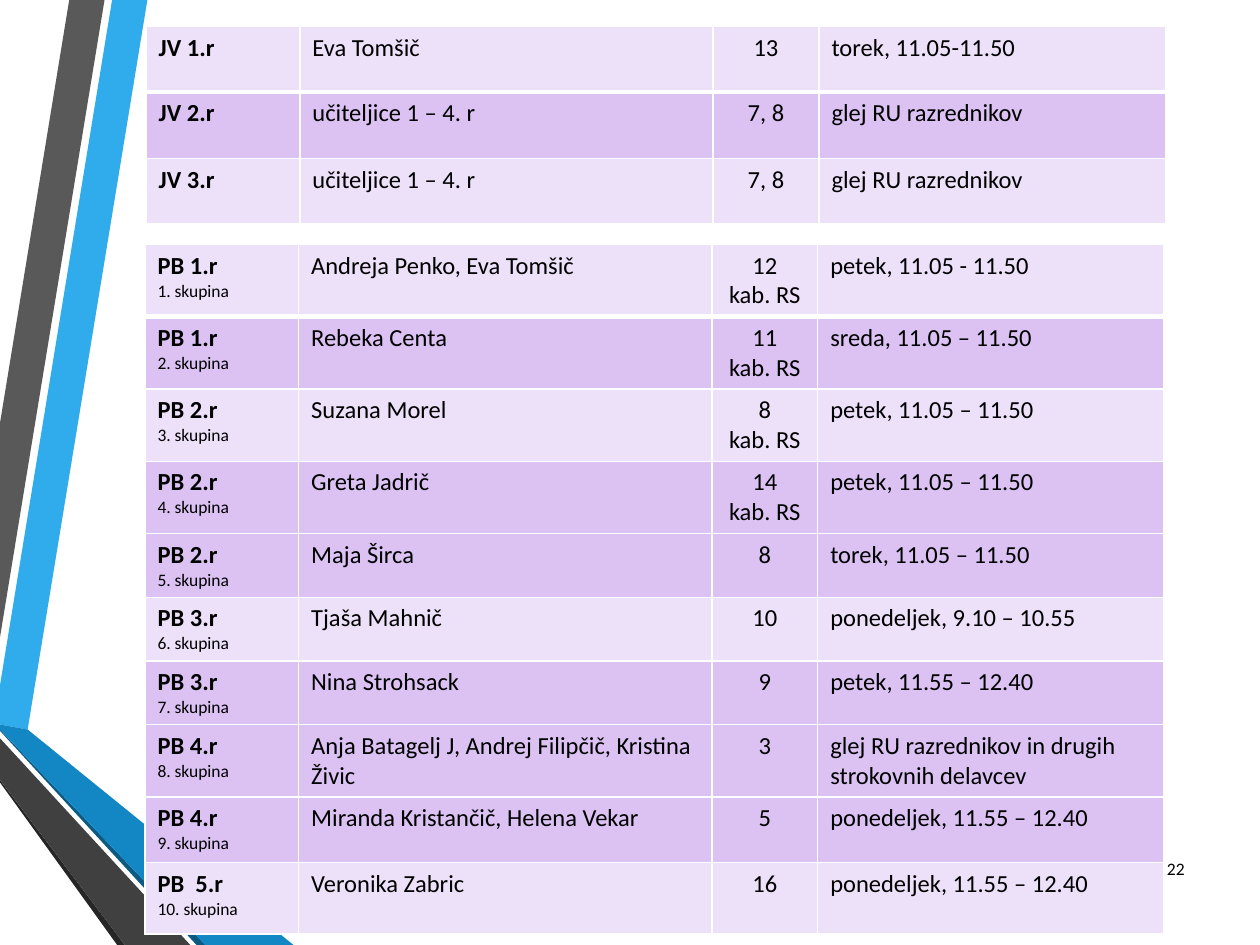
import pptx
import pptx.util
import pptx.dml.color
import pptx.enum.text
import pptx.oxml
import pptx.oxml.ns
from pptx.util import Inches

COLORS = {
    "blue": "30ACEC", "gray": "595959", "black": "262626", "navy": "0C5A82",
    "deep_blue": "1287C3", "dark_gray": "404040",
    "light": "EDE0F9", "lilac": "DBC2F3", "line": "FFFFFF", "text": "000000",
}
FONT = "Calibri"
ALIGN = pptx.enum.text.PP_ALIGN


def rgb(name):
    return pptx.dml.color.RGBColor.from_string(COLORS[name])


def add_schedule(left, top, row_heights, rows):
    """Each row holds its band colour followed by the four cell texts."""
    widths = [1.22, 3.28, 0.84, 2.75]
    frame = slide.shapes.add_table(len(rows), len(widths), Inches(left), Inches(top),
                                   Inches(sum(widths)), Inches(sum(row_heights)))
    table = frame.table
    table.first_row = False
    table.horz_banding = False
    for column, width in zip(table.columns, widths):
        column.width = Inches(width)
    for row, height in zip(table.rows, row_heights):
        row.height = Inches(height)
    for row_index, (band, *texts) in enumerate(rows):
        for column_index, text in enumerate(texts):
            cell = table.cell(row_index, column_index)
            # Borders, with a thick rule under the first row
            properties = cell._tc.get_or_add_tcPr()
            for side in "LRTB":
                thick = (row_index, side) in [(0, "B"), (1, "T")]
                properties.append(pptx.oxml.parse_xml(
                    f'<a:ln{side} {pptx.oxml.ns.nsdecls("a")} w="{38100 if thick else 12700}">'
                    f'<a:solidFill><a:srgbClr val="{COLORS["line"]}"/></a:solidFill></a:ln{side}>'))
            cell.fill.solid()
            cell.fill.fore_color.rgb = rgb(band)
            # Text
            cell.text_frame.text = text
            for line_index, paragraph in enumerate(cell.text_frame.paragraphs):
                paragraph.alignment = ALIGN.CENTER if column_index == 2 else ALIGN.LEFT
                group_line = column_index == 0 and line_index == 1
                font = paragraph.runs[0].font
                font.name = FONT
                font.size = pptx.util.Pt(10 if group_line else 14)
                font.bold = column_index == 0 and line_index == 0
                font.color.rgb = rgb("text")


presentation = pptx.Presentation()
presentation.slide_width = Inches(10)
presentation.slide_height = Inches(7.5)
slide = presentation.slides.add_slide(presentation.slide_layouts[6])

# Ribbons along the left edge
ribbons = [
    ("blue", [(0, 5.44), (0, 5.75), (0.22, 5.79), (1.17, 0), (0.89, 0)]),
    ("gray", [(0.83, 0), (0.55, 0), (0, 3.36), (0, 5.06)]),
    ("black", [(0, 6.19), (0, 6.21), (0.93, 7.5), (0.99, 7.5)]),
    ("navy", [(0, 5.79), (0, 5.8), (1.56, 7.5), (1.63, 7.5)]),
    ("deep_blue", [(0, 5.79), (1.63, 7.5), (2.33, 7.5), (0.22, 5.79), (0, 5.75)]),
    ("dark_gray", [(0, 6.19), (0.99, 7.5), (1.51, 7.5), (0, 5.86)]),
]
for color, points in ribbons:
    start, *others = [(Inches(x), Inches(y)) for x, y in points]
    builder = slide.shapes.build_freeform(*start)
    builder.add_line_segments(others, close=True)
    shape = builder.convert_to_shape()
    shape.shadow.inherit = False
    shape.fill.solid()
    shape.fill.fore_color.rgb = rgb(color)
    shape.line.fill.background()

# Morning care groups
add_schedule(1.16, 0.21, [0.52, 0.53, 0.52], [
    ("light", "JV 1.r", "Eva Tomšič", "13", "torek, 11.05-11.50"),
    ("lilac", "JV 2.r", "učiteljice 1 – 4. r", "7, 8", "glej RU razrednikov"),
    ("light", "JV 3.r", "učiteljice 1 – 4. r", "7, 8", "glej RU razrednikov"),
])

# Afternoon care groups, numbered in order
afternoon = [
    ("light", "PB 1.r", "Andreja Penko, Eva Tomšič", "12\nkab. RS", "petek, 11.05 - 11.50"),
    ("lilac", "PB 1.r", "Rebeka Centa", "11\nkab. RS", "sreda, 11.05 – 11.50"),
    ("light", "PB 2.r", "Suzana Morel", "8\nkab. RS", "petek, 11.05 – 11.50"),
    ("lilac", "PB 2.r", "Greta Jadrič", "14\nkab. RS", "petek, 11.05 – 11.50"),
    ("lilac", "PB 2.r", "Maja Širca", "8", "torek, 11.05 – 11.50"),
    ("light", "PB 3.r", "Tjaša Mahnič", "10", "ponedeljek, 9.10 – 10.55"),
    ("lilac", "PB 3.r", "Nina Strohsack", "9", "petek, 11.55 – 12.40"),
    ("lilac", "PB 4.r", "Anja Batagelj J, Andrej Filipčič, Kristina Živic", "3",
     "glej RU razrednikov in drugih strokovnih delavcev"),
    ("lilac", "PB 4.r", "Miranda Kristančič, Helena Vekar", "5", "ponedeljek, 11.55 – 12.40"),
    ("light", "PB  5.r", "Veronika Zabric", "16", "ponedeljek, 11.55 – 12.40"),
]
add_schedule(1.15, 1.94, [0.55] * 4 + [0.5] * 3 + [0.55, 0.52, 0.57], [
    (band, f"{grade}\n{number}. skupina", *details)
    for number, (band, grade, *details) in enumerate(afternoon, 1)
])

# Slide number
number_box = slide.shapes.add_textbox(Inches(9.05), Inches(6.69), Inches(0.45), Inches(0.4))
text_frame = number_box.text_frame
text_frame.word_wrap = True
text_frame.vertical_anchor = pptx.enum.text.MSO_ANCHOR.MIDDLE
text_frame.text = "22"
paragraph = text_frame.paragraphs[0]
paragraph.alignment = ALIGN.RIGHT
font = paragraph.runs[0].font
font.name = FONT
font.size = pptx.util.Pt(10)
font.color.rgb = rgb("text")

presentation.save("out.pptx")
